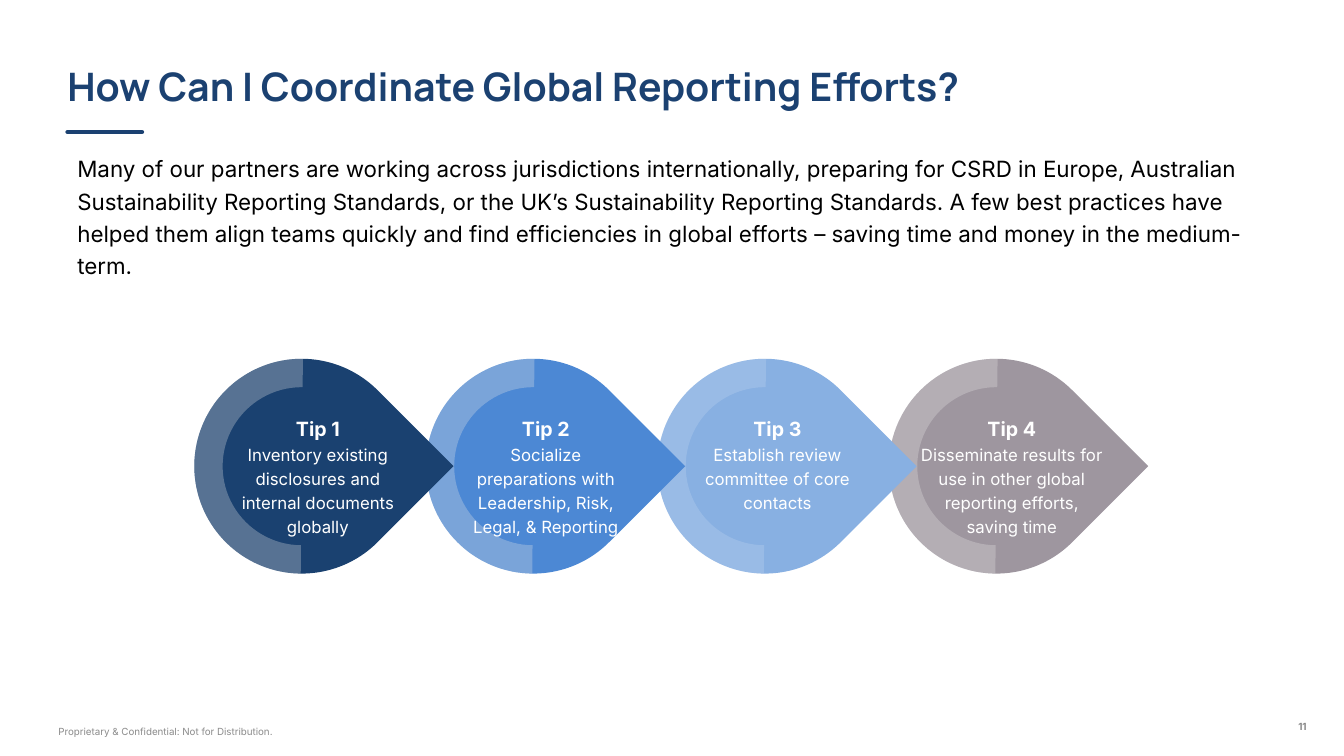
from pptx import Presentation
from pptx.dml.color import RGBColor
from pptx.enum import shapes, text
from pptx.oxml import ns, xmlchemy
from pptx.util import Pt

NAVY = "1B4171"
PALE = "E7E6E6"
DROP_SIZE = 153.4
DROP_PITCH = 165.4

# Heading, wording, drop colour, arc colour, text offset from drop, text width
TIPS = [
    ("Tip 1", "Inventory existing disclosures and internal documents globally",
     "1A4170", PALE, 22.4, 131.8),
    ("Tip 2", "Socialize preparations with Leadership, Risk, Legal, & Reporting",
     "4C88D4", PALE, 19.1, 133.2),
    ("Tip 3", "Establish review committee of core contacts",
     "88B0E2", "C3D7F1", 24.2, 123.1),
    ("Tip 4", "Disseminate results for use in other global reporting efforts, saving time",
     "9E969F", PALE, 14.3, 146.9),
]


def color(hex_string):
    return RGBColor.from_string(hex_string)


def add_text(slide, box, lines, font="Inter", hue="000000", align=text.PP_ALIGN.LEFT,
             anchor=text.MSO_ANCHOR.TOP, spacing=1.0, margins=(7.2, 3.6), wrap=True):
    """Place one paragraph for each (wording, size, bold) in lines."""
    tf = slide.shapes.add_textbox(*map(Pt, box)).text_frame
    tf.word_wrap = wrap
    tf.vertical_anchor = anchor
    tf.margin_left = tf.margin_right = Pt(margins[0])
    tf.margin_top = tf.margin_bottom = Pt(margins[1])
    for i, (wording, size, bold) in enumerate(lines):
        p = tf.add_paragraph() if i else tf.paragraphs[0]
        p.alignment = align
        p.line_spacing = spacing
        r = p.add_run()
        r.text = wording
        r.font.name = font
        r.font.size = Pt(size)
        r.font.bold = bold
        r.font.color.rgb = color(hue)


def add_filled(slide, kind, box, hue, rotation, opacity=100):
    sp = slide.shapes.add_shape(kind, *map(Pt, box))
    sp.shadow.inherit = False
    sp.rotation = rotation
    sp.fill.solid()
    sp.fill.fore_color.rgb = color(hue)
    sp.line.fill.background()
    if opacity < 100:
        clr = sp.fill._xPr.find(ns.qn("a:solidFill"))[0]
        alpha = xmlchemy.OxmlElement("a:alpha")
        alpha.set("val", str(opacity * 1000))
        clr.append(alpha)
    return sp


def add_header(slide, left, top, width):
    add_text(slide, (left, top, width, 34.6),
             [("How Can I Coordinate Global Reporting Efforts?", 28, True)],
             font="Manrope", hue=NAVY, anchor=text.MSO_ANCHOR.BOTTOM,
             spacing=0.9, margins=(0, 0))
    y = top + 50.4
    rule = slide.shapes.add_connector(
        shapes.MSO_CONNECTOR.STRAIGHT, Pt(left), Pt(y), Pt(left + 53.3), Pt(y))
    rule.line.color.rgb = color(NAVY)
    rule.line.width = Pt(3)
    rule.line._get_or_add_ln().set("cap", "rnd")
    rule._element.spPr.append(xmlchemy.OxmlElement("a:effectLst"))


def add_intro(slide, box):
    add_text(slide, box, [(
        "Many of our partners are working across jurisdictions internationally, "
        "preparing for CSRD in Europe, Australian Sustainability Reporting Standards, "
        "or the UK’s Sustainability Reporting Standards. A few best practices have "
        "helped them align teams quickly and find efficiencies in global efforts – "
        "saving time and money in the medium-term.", 16, False)], spacing=1.2)


def add_tip_chain(slide, left, top):
    """Draw the drops from right to left so each point overlaps the next drop."""
    chain = [(left + i * DROP_PITCH, tip) for i, tip in enumerate(TIPS)]
    for x, (_, _, drop_hue, arc_hue, _, _) in reversed(chain):
        box = (x, top, DROP_SIZE, DROP_SIZE)
        add_filled(slide, shapes.MSO_SHAPE.TEAR, box, drop_hue, 45)
        arc = add_filled(slide, shapes.MSO_SHAPE.BLOCK_ARC, box, arc_hue, 270, opacity=30)
        for i, value in enumerate((108.302, 0.407, 0.132)):
            arc.adjustments[i] = value
    for x, (heading, wording, _, _, offset, width) in chain:
        add_text(slide, (x + offset, top + 34.6, width, 73.4),
                 [(heading, 14, True), (wording, 12, False)],
                 hue="FFFFFF", align=text.PP_ALIGN.CENTER, spacing=1.2)


def add_footer(slide, left, top, number_left):
    add_text(slide, (left, top, 216, 18.7),
             [("Proprietary & Confidential: Not for Distribution.", 7, False)], hue="8C8C8C")
    add_text(slide, (number_left, top, 26.6, 18.7), [("11", 7, True)],
             hue="888888", margins=(0, 0), wrap=False)


def main():
    prs = Presentation()
    prs.slide_width, prs.slide_height = Pt(960), Pt(540)
    slide = prs.slides.add_slide(prs.slide_layouts[6])
    add_header(slide, 48.2, 43.9, 682.6)
    add_tip_chain(slide, 138.8, 256.3)
    add_intro(slide, (48.2, 103.7, 852.5, 89.3))
    add_footer(slide, 34.6, 514.8, 927.4)
    prs.save("out.pptx")


if __name__ == "__main__":
    main()
